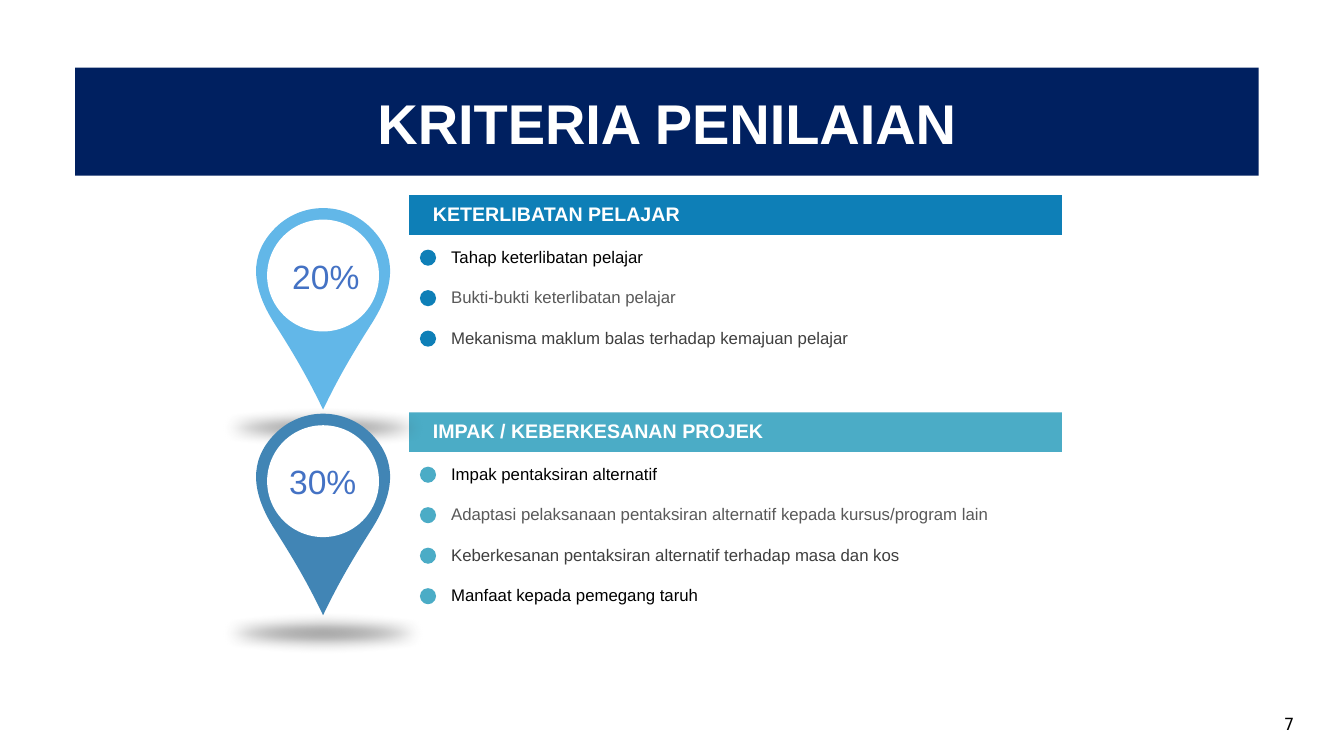
from lxml import etree
from pptx import Presentation
from pptx import util as u
from pptx.dml.color import RGBColor
from pptx.enum import shapes, text
from pptx.oxml import ns

COLORS = {
    "navy": "002060", "blue": "0E7FB7", "teal": "4BACC6",
    "sky": "62B7E8", "steel": "4185B5", "percent": "4472C4",
    "white": "FFFFFF", "black": "000000", "gray": "595959",
    "dark": "3F3F3F", "shadow": "404040",
}
CELL = u.Inches(1 / 6)  # grid of 80 columns by 45 rows

# Pin lying in a square with its tip at the top right; the other side mirrors this one
PIN_SIZE = 9.66
PIN_SIDE = [(0, 5.64), (0, 3.36), (1.48, 2.12), (4.07, 1.56), (5.94, 1.14), (7.5, 0.76)]
PIN_TIP = (PIN_SIZE, 0)
PIN_CROWN = [(1.8, PIN_SIZE), (0, 7.86), PIN_SIDE[0]]


def grid(*cells):
    return [round(cell * CELL) for cell in cells]


def color(name):
    return RGBColor.from_string(COLORS[name])


def write(shape, words, size=12, ink="black", font="Arial", bold=False, grow=False,
          align=text.PP_ALIGN.LEFT, anchor=text.MSO_ANCHOR.TOP):
    frame = shape.text_frame
    frame.word_wrap = True
    frame.vertical_anchor = anchor
    if grow:
        frame.auto_size = text.MSO_AUTO_SIZE.SHAPE_TO_FIT_TEXT
    paragraph = frame.paragraphs[0]
    paragraph.alignment = align
    run = paragraph.add_run()
    run.text = words
    run.font.size = u.Pt(size)
    run.font.name = font
    run.font.bold = bold
    run.font.color.rgb = color(ink)


def bend(freeform):
    """Turn every three straight segments into one cubic curve."""
    lines = list(freeform.element.iter(ns.qn("a:lnTo")))
    for i in range(0, len(lines), 3):
        curve = etree.Element(ns.qn("a:cubicBezTo"))
        lines[i].addprevious(curve)
        for line in lines[i:i + 3]:
            curve.append(line[0])
            line.getparent().remove(line)


class CriteriaSlide:
    def __init__(self, deck):
        self.slide = deck.slides.add_slide(deck.slide_layouts[6])
        self.shapes = self.slide.shapes

    def finish(self, shape, fill):
        shape.shadow.inherit = False
        shape.fill.solid()
        shape.fill.fore_color.rgb = color(fill)
        shape.line.fill.background()
        return shape

    def bar(self, col, row, cols, rows, fill):
        bar = self.shapes.add_shape(shapes.MSO_SHAPE.RECTANGLE, *grid(col, row, cols, rows))
        return self.finish(bar, fill)

    def oval(self, col, row, cols, rows, fill, canvas=None):
        oval = (canvas or self.shapes).add_shape(
            shapes.MSO_SHAPE.OVAL, *grid(col, row, cols, rows))
        return self.finish(oval, fill)

    def label(self, words, col, row, cols, rows, **style):
        write(self.shapes.add_textbox(*grid(col, row, cols, rows)), words, **style)

    def soft_shadow(self, col, row, cols, rows, canvas):
        shadow = self.oval(col, row, cols, rows, "shadow", canvas)
        properties = shadow.element.spPr
        tint = properties.find(".//" + ns.qn("a:srgbClr"))
        etree.SubElement(tint, ns.qn("a:alpha"), val="58000")
        effects = properties.find(ns.qn("a:effectLst"))
        etree.SubElement(effects, ns.qn("a:softEdge"), rad=str(u.Inches(0.14)))

    def pin(self, row, fill, col=14.4):
        canvas = self.shapes.add_group_shape().shapes
        mirrored = [(PIN_SIZE - y, PIN_SIZE - x) for x, y in reversed(PIN_SIDE)]
        outline = [grid(col + x, row + y)
                   for x, y in PIN_SIDE + [PIN_TIP] + mirrored + PIN_CROWN]
        builder = canvas.build_freeform(*outline[0])
        builder.add_line_segments(outline[1:], close=True)
        drop = self.finish(builder.convert_to_shape(), fill)
        bend(drop)
        drop.rotation = 135
        self.oval(15.9, row + 0.35, 6.66, 6.66, "white", canvas)
        self.soft_shadow(10.86, row + 11.46, 16.74, 2.52, canvas)

    def criterion(self, heading, points, row, fill):
        self.bar(24.36, row, 38.85, 2.36, fill)
        self.label(heading, 25.18, row + 0.22, 32.16, 1.8, size=14, ink="white",
                   bold=True, anchor=text.MSO_ANCHOR.MIDDLE)
        for i, (point, ink) in enumerate(points):
            point_row = row + 2.75 + 2.41 * i
            self.label(point, 26.26, point_row, 37.68, 1.8, ink=ink, grow=True)
            self.oval(25, point_row + 0.49, 0.96, 0.96, fill)


def main():
    deck = Presentation()
    deck.slide_width, deck.slide_height = grid(80, 45)
    page = CriteriaSlide(deck)

    # Page number and title
    page.label("7", 75.84, 42.18, 3.66, 2.4, font="DejaVu Sans Mono")
    title = page.bar(4.48, 4.02, 70.44, 6.44, "navy")
    write(title, "KRITERIA PENILAIAN", size=40, ink="white", bold=True,
          align=text.PP_ALIGN.CENTER, anchor=text.MSO_ANCHOR.MIDDLE)

    # Criteria with their points
    page.criterion("KETERLIBATAN PELAJAR", [
        ("Tahap keterlibatan pelajar", "black"),
        ("Bukti-bukti keterlibatan pelajar", "gray"),
        ("Mekanisma maklum balas terhadap kemajuan pelajar", "dark"),
    ], 11.62, "blue")
    page.criterion("IMPAK / KEBERKESANAN PROJEK", [
        ("Impak pentaksiran alternatif", "black"),
        ("Adaptasi pelaksanaan pentaksiran alternatif kepada kursus/program lain", "gray"),
        ("Keberkesanan pentaksiran alternatif terhadap masa dan kos", "dark"),
        ("Manfaat kepada pemegang taruh", "black"),
    ], 24.54, "teal")

    # Pins with the weight of each criterion
    for weight, col, row, fill in (("20%", 16.8, 12.72, "sky"), ("30%", 16.62, 24.96, "steel")):
        page.pin(row, fill)
        page.label(weight, col, row + 2.18, 5.28, 3, size=24, ink="percent",
                   grow=True, anchor=text.MSO_ANCHOR.BOTTOM)

    deck.save("out.pptx")


if __name__ == "__main__":
    main()
